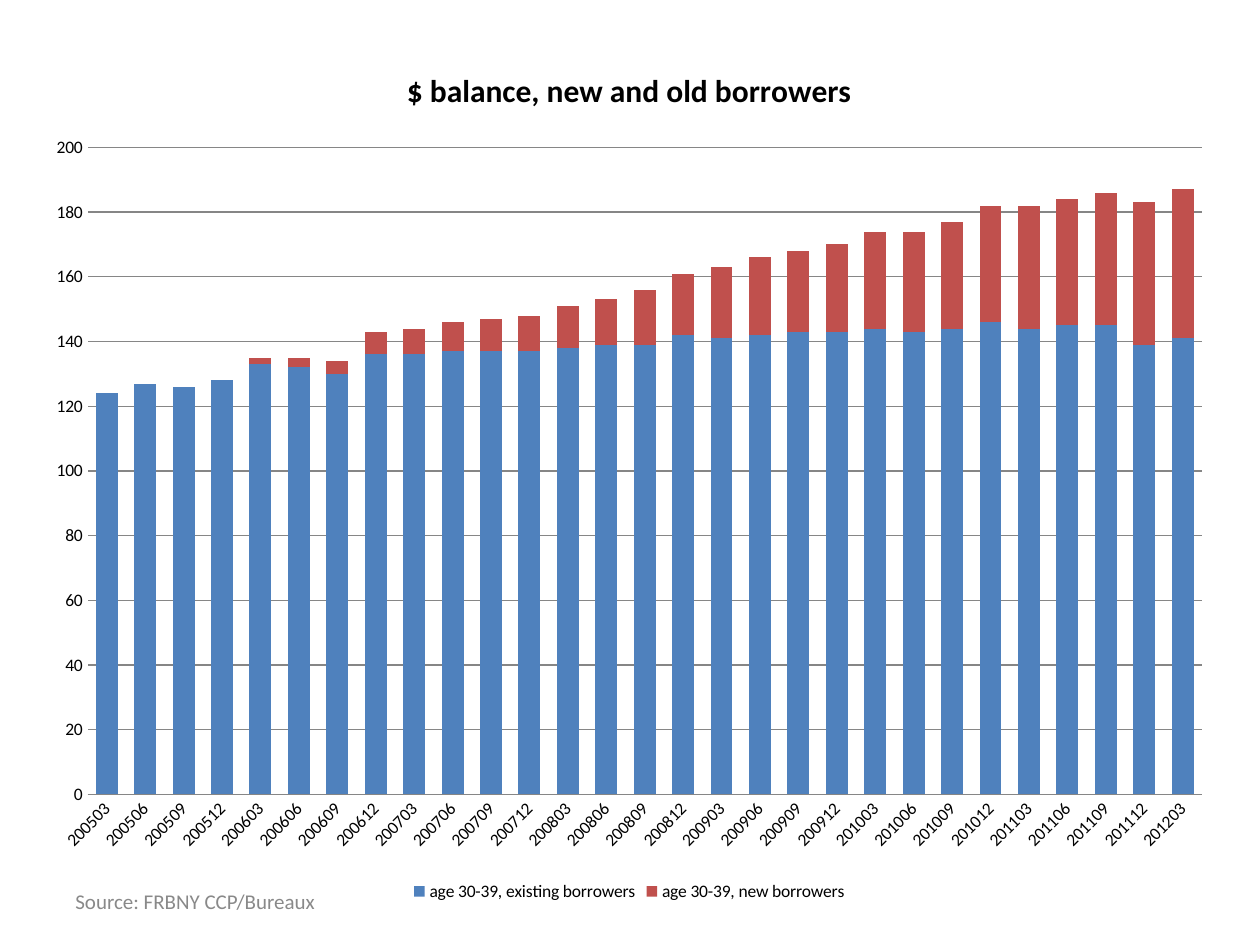
"""Build a slide with a stacked column chart of loan balances by borrower type."""
from pptx import Presentation
from pptx.chart.data import CategoryChartData
from pptx.dml.color import RGBColor
from pptx.enum.chart import XL_CHART_TYPE as CT, XL_LEGEND_POSITION as LP, XL_TICK_MARK as TM
from pptx.enum.text import MSO_ANCHOR
from pptx.util import Cm, Pt

BLACK = RGBColor(0x00, 0x00, 0x00)
GREY = RGBColor(0x89, 0x89, 0x89)
LINE = RGBColor(0x86, 0x86, 0x86)
BLUE = RGBColor(0x4F, 0x81, 0xBD)
RED = RGBColor(0xC0, 0x50, 0x4D)
FONT = "Calibri"


def write(tf, text, size=12, color=BLACK, bold=False):
    r = tf.paragraphs[0].add_run()
    r.text = text
    r.font.name = FONT
    r.font.size = Pt(size)
    r.font.bold = bold
    r.font.color.rgb = color


prs = Presentation()
prs.slide_width, prs.slide_height = Cm(25.4), Cm(19.05)
s = prs.slides.add_slide(prs.slide_layouts[6])

tf = s.shapes.add_textbox(Cm(1.27), Cm(17.65), Cm(5.92), Cm(1.02)).text_frame
tf.word_wrap = True
tf.vertical_anchor = MSO_ANCHOR.MIDDLE
write(tf, "Source: FRBNY CCP/Bureaux", color=GREY)

existing = [124, 127, 126, 128, 133, 132, 130, 136, 136, 137, 137, 137, 138, 139, 139,
            142, 141, 142, 143, 143, 144, 143, 144, 146, 144, 145, 145, 139, 141]
new = [None] * 4 + [2, 3, 4, 7, 8, 9, 10, 11, 13, 14, 17, 19, 22, 24, 25, 27,
                    30, 31, 33, 36, 38, 39, 41, 44, 46]
quarters = [f"{year}{month:02}" for year in range(2005, 2013) for month in (3, 6, 9, 12)]

data = CategoryChartData()
data.categories = quarters[:len(existing)]
data.add_series("age 30-39, existing borrowers", existing)
data.add_series("age 30-39, new borrowers", new)
chart = s.shapes.add_chart(CT.COLUMN_STACKED, Cm(0.66), Cm(0.79), Cm(24.05), Cm(17.48), data).chart
chart.font.name = FONT
chart.font.size = Pt(10)
chart.font.color.rgb = BLACK
chart.has_title = True
write(chart.chart_title.text_frame, "$ balance, new and old borrowers", size=18, bold=True)
chart.chart_title.include_in_layout = False
chart.has_legend = True
chart.legend.position = LP.BOTTOM
chart.legend.include_in_layout = False

plot = chart.plots[0]
plot.gap_width = 75
plot.overlap = 100
plot.vary_by_categories = False
for series, color in zip(plot.series, (BLUE, RED)):
    series.format.fill.solid()
    series.format.fill.fore_color.rgb = color

for axis in (chart.category_axis, chart.value_axis):
    axis.major_tick_mark = axis.minor_tick_mark = TM.NONE
chart.category_axis.format.line.color.rgb = LINE
val_axis = chart.value_axis
val_axis.minimum_scale, val_axis.maximum_scale, val_axis.major_unit = 0, 200, 20
val_axis.format.line.fill.background()
val_axis.has_major_gridlines = True
val_axis.major_gridlines.format.line.color.rgb = LINE

prs.save("out.pptx")
